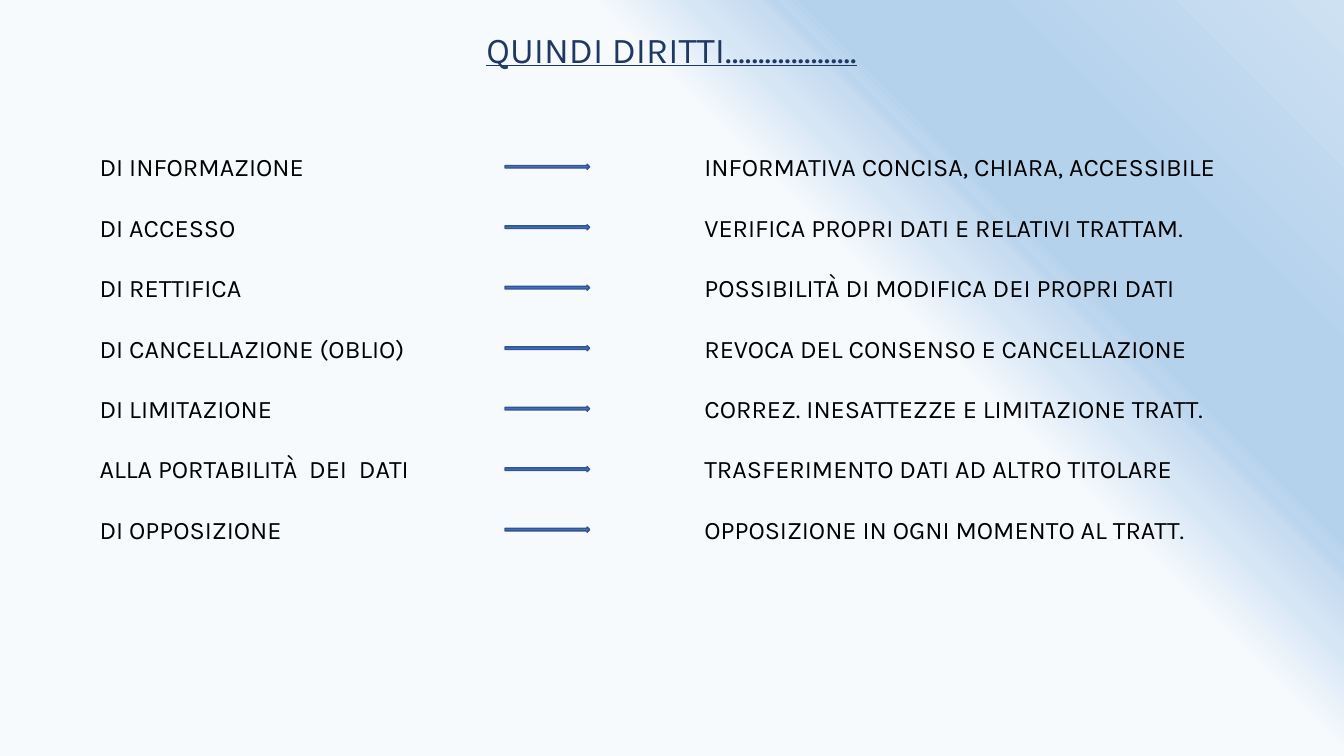
import dataclasses

import pptx
import pptx.dml.color
import pptx.enum.shapes
import pptx.enum.text
import pptx.oxml.ns
import pptx.oxml.xmlchemy
import pptx.util
from lxml import etree


@dataclasses.dataclass(frozen=True)
class Theme:
    font: str = "Karla"
    title_color: str = "203864"
    body_color: str = "000000"
    arrow_fill: str = "4472C4"
    arrow_line: str = "325491"
    title_size: float = 26
    body_size: float = 18
    title_leading: float = 32.5
    body_leading: float = 21.6
    # Background stops: position in percent, colour
    sky: tuple = (
        (64, "F7FAFD"), (69, "D6E6F5"), (72, "C6DCF1"), (73, "BAD5EE"),
        (73, "BED7EF"), (74, "B8D4ED"), (74, "B5D2EC"), (83, "B5D2EC"),
        (84, "B7D3ED"), (100, "CEE1F2"),
    )


def rgb(code):
    return pptx.dml.color.RGBColor.from_string(code)


def add_node(parent, tag, **attributes):
    return etree.SubElement(parent, pptx.oxml.ns.qn(tag), attributes)


class RightsSlide:
    """Style, current slide and a grid of 40 columns by 25 rows."""

    COLUMNS, ROWS = 40, 25

    def __init__(self, deck, theme):
        self.theme = theme
        self.slide = deck.slides.add_slide(deck.slide_layouts[6])
        self.column = deck.slide_width / self.COLUMNS
        self.row = deck.slide_height / self.ROWS

    def place(self, left, top, width, height):
        return (round(left * self.column), round(top * self.row),
                round(width * self.column), round(height * self.row))

    def background(self):
        fill = self.slide.background.fill
        fill.gradient()
        fill.gradient_angle = 45
        stops = self.slide.element.find(".//" + pptx.oxml.ns.qn("a:gsLst"))
        for stop in list(stops):
            stops.remove(stop)
        for percent, color in self.theme.sky:
            stop = add_node(stops, "a:gs", pos=str(percent * 1000))
            add_node(stop, "a:srgbClr", val=color)

    def text_frame(self, *cells):
        frame = self.slide.shapes.add_textbox(*self.place(*cells)).text_frame
        frame.word_wrap = True
        frame.auto_size = pptx.enum.text.MSO_AUTO_SIZE.SHAPE_TO_FIT_TEXT
        return frame

    def style(self, paragraph, size, color, leading):
        paragraph.line_spacing = pptx.util.Pt(leading)
        paragraph.font.name = self.theme.font
        paragraph.font.size = pptx.util.Pt(size)
        paragraph.font.color.rgb = rgb(color)

    def title(self, paragraph, text):
        paragraph.text = text
        paragraph.alignment = pptx.enum.text.PP_ALIGN.CENTER
        self.style(paragraph, self.theme.title_size, self.theme.title_color,
                   self.theme.title_leading)
        paragraph.font.underline = True

    def entry(self, paragraph, right, meaning, gap, tab):
        paragraph.text = f"{right}\t{meaning}"
        paragraph.space_before = pptx.util.Pt(gap)
        # The tab list has to precede the font properties
        tabs = add_node(paragraph._p.get_or_add_pPr(), "a:tabLst")
        add_node(tabs, "a:tab", pos=str(round(tab * self.column)), algn="l")
        self.style(paragraph, self.theme.body_size, self.theme.body_color,
                   self.theme.body_leading)

    def arrow(self, *cells):
        arrow = self.slide.shapes.add_shape(
            pptx.enum.shapes.MSO_SHAPE.RIGHT_ARROW, *self.place(*cells))
        arrow.shadow.inherit = False
        arrow.fill.solid()
        arrow.fill.fore_color.rgb = rgb(self.theme.arrow_fill)
        arrow.line.color.rgb = rgb(self.theme.arrow_line)
        arrow.line.width = pptx.util.Pt(1)


RIGHTS = (
    ("DI INFORMAZIONE", "INFORMATIVA CONCISA, CHIARA, ACCESSIBILE"),
    ("DI ACCESSO", "VERIFICA PROPRI DATI E RELATIVI TRATTAM."),
    ("DI RETTIFICA", "POSSIBILITÀ DI MODIFICA DEI PROPRI DATI"),
    ("DI CANCELLAZIONE (OBLIO)", "REVOCA DEL CONSENSO E CANCELLAZIONE"),
    ("DI LIMITAZIONE", "CORREZ. INESATTEZZE E LIMITAZIONE TRATT."),
    ("ALLA PORTABILITÀ  DEI  DATI", "TRASFERIMENTO DATI AD ALTRO TITOLARE"),
    ("DI OPPOSIZIONE", "OPPOSIZIONE IN OGNI MOMENTO AL TRATT."),
)


def main():
    deck = pptx.Presentation()
    deck.slide_width = pptx.util.Inches(13.33)
    deck.slide_height = pptx.util.Inches(7.5)
    rights_slide = RightsSlide(deck, Theme())
    rights_slide.background()

    # Heading and list of rights
    frame = rights_slide.text_frame(2.67, 0.67, 34.65, 17.67)
    rights_slide.title(frame.paragraphs[0], "QUINDI DIRITTI………………..")
    for index, (right, meaning) in enumerate(RIGHTS):
        gap = 21.6 if index else 57.6
        rights_slide.entry(frame.add_paragraph(), right, meaning, gap, tab=18)

    # One arrow per right, two grid rows apart
    for index in range(len(RIGHTS)):
        rights_slide.arrow(15.03, 5.43 + 2 * index, 2.52, 0.17)

    deck.save("out.pptx")


if __name__ == "__main__":
    main()
